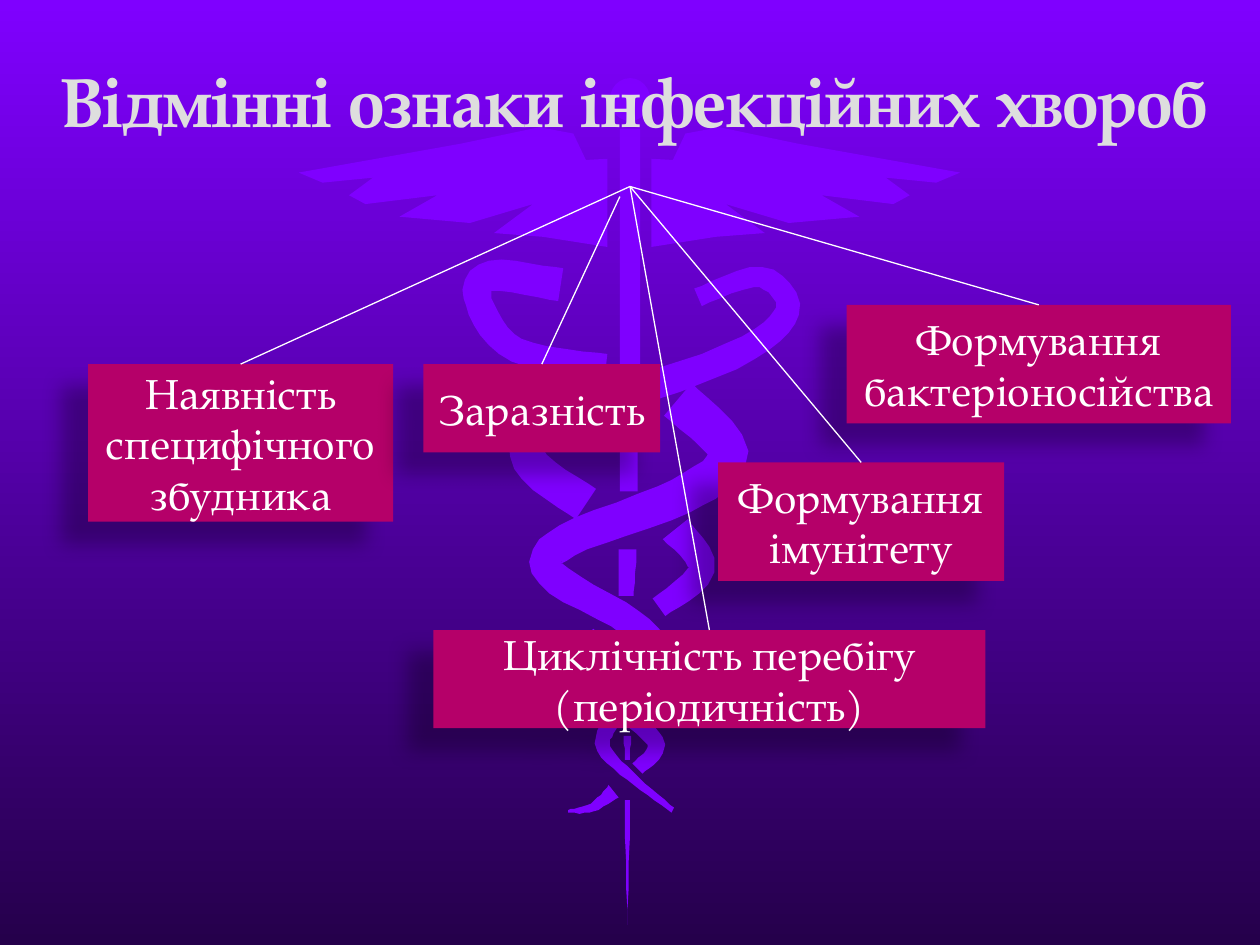
from math import hypot
from typing import NamedTuple

from lxml.etree import SubElement
from pptx import Presentation
from pptx.dml.color import RGBColor
from pptx.enum.shapes import MSO_CONNECTOR, MSO_SHAPE
from pptx.enum.text import MSO_ANCHOR, PP_ALIGN
from pptx.oxml.ns import qn
from pptx.util import Inches, Pt

VIOLET = RGBColor(0x7F, 0x00, 0xFF)
DEEP_VIOLET = RGBColor(0x25, 0x00, 0x4B)
CRIMSON = RGBColor(0xB5, 0x00, 0x69)
SILVER = RGBColor(0xDE, 0xDE, 0xDE)
WHITE = RGBColor(0xFF, 0xFF, 0xFF)
BLACK = RGBColor(0x00, 0x00, 0x00)
FONT = "TeX Gyre Pagella"
TOP_SIDE = 0
CURVE_STEPS = 6

Points = list[tuple[float, float]]


class Feature(NamedTuple):
    text: str
    left: float
    top: float
    width: float
    height: float
    ray_start: tuple[float, float] = (5, 1.48)


class Ribbon(NamedTuple):
    """A band along a smooth centre line, in hundredths of an inch."""
    centre: Points
    start_width: float
    end_width: float


FEATURES = [
    Feature("Наявність специфічного збудника", 0.7, 2.89, 2.42, 1.25),
    Feature("Заразність", 3.36, 2.89, 1.88, 0.7, (4.92, 1.56)),
    Feature("Формування імунітету", 5.7, 3.67, 2.27, 0.94),
    Feature("Циклічність перебігу (періодичність)", 3.44, 5, 4.38, 0.78),
    Feature("Формування бактеріоносійства", 6.72, 2.42, 3.05, 0.94),
]

STAFF = [
    Ribbon([(500, 102), (500, 293)], 15, 15),
    Ribbon([(499, 332), (499, 390)], 14, 13),
    Ribbon([(498, 436), (497, 473)], 15, 12),
    Ribbon([(498, 584), (498, 603)], 6, 4),
    Ribbon([(498, 635), (498, 734)], 5, 0),
]
SNAKES = [
    Ribbon([(554, 236), (604, 220), (625, 247), (580, 283), (440, 335), (420, 365),
            (465, 400)], 14, 30),
    Ribbon([(445, 226), (390, 219), (380, 240), (410, 278), (481, 290)], 26, 18),
    Ribbon([(538, 317), (578, 360), (540, 394), (450, 429), (437, 455), (500, 494),
            (530, 528), (505, 557)], 34, 18),
    Ribbon([(536, 420), (557, 452), (523, 482)], 25, 17),
    Ribbon([(478, 506), (457, 534), (500, 568), (521, 592), (506, 610)], 20, 11),
    Ribbon([(484, 574), (479, 594), (505, 620), (534, 643)], 14, 4),
    Ribbon([(487, 628), (470, 641), (451, 644)], 12, 2),
]
LEFT_WING: Points = [
    (482, 126), (482, 196), (431, 188), (392, 185), (423, 162), (373, 177),
    (317, 172), (347, 155), (290, 162), (277, 155), (296, 141), (256, 145),
    (237, 137), (366, 114), (428, 101), (455, 106), (465, 127),
]
RIGHT_WING: Points = [(999 - x, y) for x, y in LEFT_WING]


def smooth(points: Points) -> Points:
    """Sample a Catmull-Rom curve through the points."""
    padded = [points[0], *points, points[-1]]
    curve = []
    for a, b, c, d in zip(padded, padded[1:], padded[2:], padded[3:]):
        for step in range(CURVE_STEPS):
            t = step / CURVE_STEPS
            curve.append(tuple(
                q + t * (r - p + t * (2 * p - 5 * q + 4 * r - s
                                      + t * (3 * q - p - 3 * r + s))) / 2
                for p, q, r, s in zip(a, b, c, d)))
    return [*curve, points[-1]]


def ribbon_outline(ribbon: Ribbon) -> Points:
    curve = smooth(ribbon.centre)
    last = len(curve) - 1
    one_side, other_side = [], []
    for i, (x, y) in enumerate(curve):
        before, after = curve[max(i - 1, 0)], curve[min(i + 1, last)]
        dx, dy = after[0] - before[0], after[1] - before[1]
        width = ribbon.start_width + (ribbon.end_width - ribbon.start_width) * i / last
        reach = width / 2 / hypot(dx, dy)
        one_side.append((x - dy * reach, y + dx * reach))
        other_side.append((x + dy * reach, y - dx * reach))
    return one_side + other_side[::-1]


def paint(shape, color: RGBColor) -> None:
    """Give a flat fill with no outline and no shadow."""
    shape.fill.solid()
    shape.fill.fore_color.rgb = color
    shape.line.fill.background()
    shape.shadow.inherit = False


def format_text(frame, size: float, color: RGBColor, bold: bool = False) -> None:
    frame.word_wrap = True
    frame.vertical_anchor = MSO_ANCHOR.MIDDLE
    paragraph = frame.paragraphs[0]
    paragraph.alignment = PP_ALIGN.CENTER
    font = paragraph.runs[0].font
    for name, value in {"name": FONT, "size": Pt(size), "bold": bold}.items():
        setattr(font, name, value)
    font.color.rgb = color


def draw_caduceus(slide) -> None:
    emblem = slide.shapes.add_group_shape().shapes
    bands = [ribbon_outline(ribbon) for ribbon in STAFF + SNAKES]
    for start, *rest in [*bands, LEFT_WING, RIGHT_WING]:
        builder = emblem.build_freeform(*start, scale=Inches(0.01))
        builder.add_line_segments(rest, close=True)
        paint(builder.convert_to_shape(), VIOLET)
    knob = emblem.add_shape(
        MSO_SHAPE.OVAL, Inches(4.84), Inches(0.62), Inches(0.32), Inches(0.34))
    paint(knob, VIOLET)


def add_title(slide, text: str) -> None:
    title = slide.shapes.title
    slide.shapes._spTree.append(title._element)  # in front of the emblem
    box = {"left": 0.31, "top": 0.25, "width": 9.45, "height": 1.08}
    for name, value in box.items():
        setattr(title, name, Inches(value))
    title.text_frame.text = text
    format_text(title.text_frame, 39.6, SILVER, bold=True)


def cast_shadow(shape) -> None:
    effects = shape._element.spPr.find(qn("a:effectLst"))
    shadow = SubElement(
        effects, qn("a:outerShdw"), blurRad=str(Pt(11.8)), dist=str(Pt(19.7)),
        dir=str(141 * 60000), algn="tl", rotWithShape="0")
    color = SubElement(shadow, qn("a:srgbClr"), val=str(BLACK))
    SubElement(color, qn("a:alpha"), val="28000")


def add_feature(slide, feature: Feature):
    box = slide.shapes.add_shape(
        MSO_SHAPE.RECTANGLE, Inches(feature.left), Inches(feature.top),
        Inches(feature.width), Inches(feature.height))
    paint(box, CRIMSON)
    cast_shadow(box)
    box.text_frame.text = feature.text
    format_text(box.text_frame, 24, WHITE)
    return box


def add_ray(slide, feature: Feature, box) -> None:
    x, y = map(Inches, feature.ray_start)
    ray = slide.shapes.add_connector(MSO_CONNECTOR.STRAIGHT, x, y, x, y)
    ray.end_connect(box, TOP_SIDE)
    ray.line.color.rgb = WHITE
    ray.line.width = Pt(0.75)
    SubElement(ray._element.spPr, qn("a:effectLst"))


def main() -> None:
    presentation = Presentation()
    presentation.slide_width, presentation.slide_height = Inches(10), Inches(7.5)
    slide = presentation.slides.add_slide(presentation.slide_layouts[5])

    backdrop = slide.background.fill
    backdrop.gradient()
    backdrop.gradient_angle = 270
    for stop, color in zip(backdrop.gradient_stops, (VIOLET, DEEP_VIOLET)):
        stop.color.rgb = color

    draw_caduceus(slide)
    add_title(slide, "Відмінні ознаки інфекційних хвороб")
    boxes = [add_feature(slide, feature) for feature in FEATURES]
    for feature, box in zip(FEATURES, boxes):
        add_ray(slide, feature, box)
    presentation.save("out.pptx")


if __name__ == "__main__":
    main()
